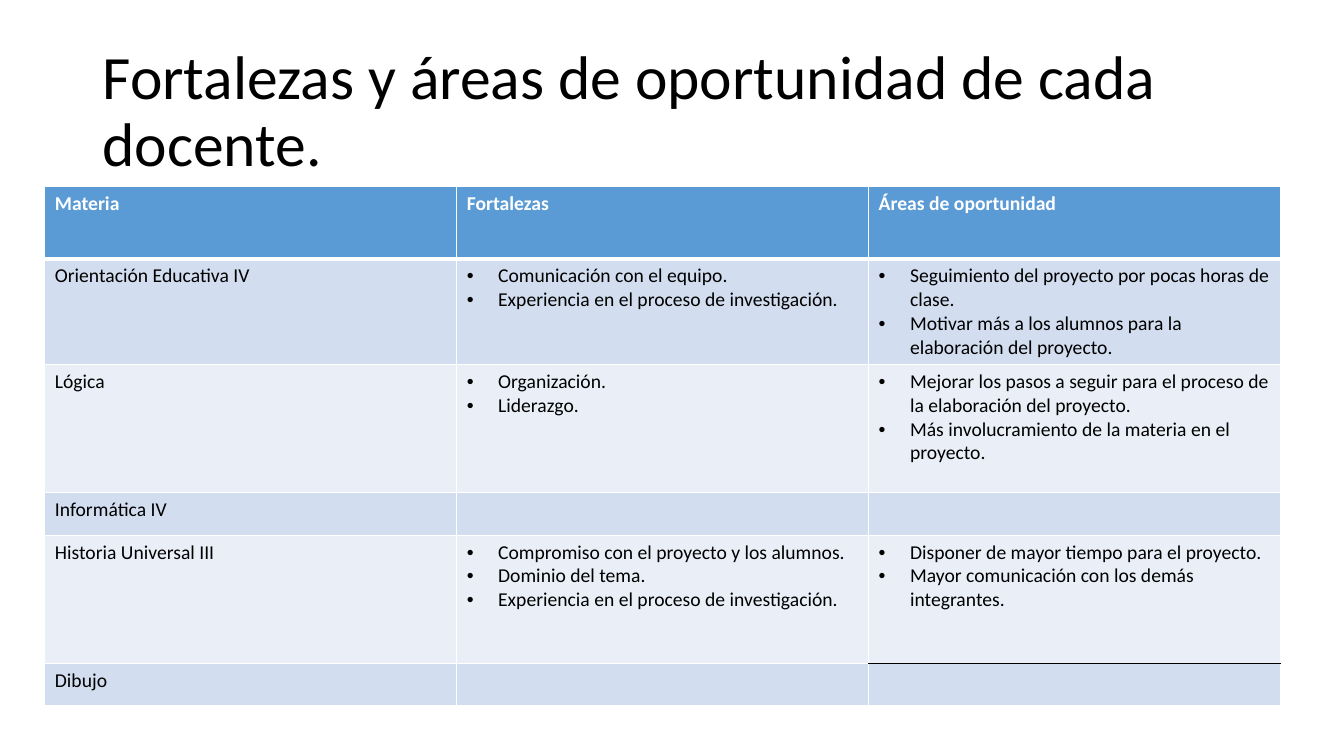
from dataclasses import dataclass

from lxml.etree import SubElement
from pptx import Presentation
from pptx.dml.color import RGBColor
from pptx.enum.text import MSO_ANCHOR as Anchor, PP_ALIGN as Align
from pptx.oxml.ns import qn
from pptx.util import Cm, Pt


@dataclass(frozen=True)
class Theme:
    """Colours, font and type sizes of the slide."""
    font: str = "Calibri"
    title_size: int = 44
    table_size: int = 14
    ink: str = "000000"
    paper: str = "FFFFFF"
    header: str = "5B9BD5"
    bands: tuple = ("D2DEEF", "EAEFF7")


THEME = Theme()
TITLE = "Fortalezas y áreas de oportunidad de cada docente."
HEADINGS = ("Materia", "Fortalezas", "Áreas de oportunidad")
COLUMN_WIDTH = 10.38
HEADER_HEIGHT = 1.83
SUBJECTS = [
    (2.62, "Orientación Educativa IV",
     ["Comunicación con el equipo.",
      "Experiencia en el proceso de investigación."],
     ["Seguimiento del proyecto por pocas horas de clase.",
      "Motivar más a los alumnos para la elaboración del proyecto."]),
    (3.23, "Lógica",
     ["Organización.", "Liderazgo."],
     ["Mejorar los pasos a seguir para el proceso de la elaboración del proyecto.",
      "Más involucramiento de la materia en el proyecto."]),
    (1.07, "Informática IV", [], []),
    (3.23, "Historia Universal III",
     ["Compromiso con el proyecto y los alumnos.",
      "Dominio del tema.",
      "Experiencia en el proceso de investigación."],
     ["Disponer de mayor tiempo para el proyecto.",
      "Mayor comunicación con los demás integrantes."]),
    (1.07, "Dibujo", [], []),
]


def style_font(font, size, color, bold=False):
    """Apply the theme font with a size, colour and weight."""
    font.name = THEME.font
    font.size = Pt(size)
    font.bold = bold
    font.color.rgb = RGBColor.from_string(color)


def add_title(page):
    """Place and format the title placeholder."""
    title = page.shapes.title
    title.left, title.top, title.width, title.height = (
        Cm(2.33), Cm(1.01), Cm(29.21), Cm(3.68))
    frame = title.text_frame
    frame.text = TITLE
    frame.word_wrap = True
    frame.vertical_anchor = Anchor.MIDDLE
    para = frame.paragraphs[0]
    para.alignment = Align.LEFT
    para.line_spacing = 0.9
    style_font(para.font, THEME.title_size, THEME.ink)


def add_bullet(para):
    """Give a paragraph a hanging round bullet."""
    props = para._p.get_or_add_pPr()
    props.set("marL", str(Cm(0.79)))
    props.set("indent", str(-Cm(0.79)))
    SubElement(props, qn("a:buFont"), typeface="Arial")
    SubElement(props, qn("a:buChar"), char="•")


def set_borders(cell, **special):
    """Draw thin white borders, except sides given as (colour, points)."""
    props = cell._tc.get_or_add_tcPr()
    for side in "LRTB":
        color, width = special.get(side, (THEME.paper, 1))
        line = SubElement(props, qn(f"a:ln{side}"), w=str(Pt(width)))
        fill = SubElement(line, qn("a:solidFill"))
        SubElement(fill, qn("a:srgbClr"), val=color)


def fill_cell(cell, lines, fill, color, bold=False, bulleted=False):
    """Write lines into a cell and colour its background."""
    cell.fill.solid()
    cell.fill.fore_color.rgb = RGBColor.from_string(fill)
    frame = cell.text_frame
    frame.text = "\n".join(lines)
    for para in frame.paragraphs:
        if bulleted and lines:
            add_bullet(para)
        style_font(para.font, THEME.table_size, color, bold)


def add_subject_table(page):
    """Add the table of strengths and areas of opportunity."""
    heights = [HEADER_HEIGHT] + [subject[0] for subject in SUBJECTS]
    table = page.shapes.add_table(
        len(heights), len(HEADINGS), Cm(1.13), Cm(4.7),
        Cm(COLUMN_WIDTH * len(HEADINGS)), Cm(sum(heights))).table
    for column in table.columns:
        column.width = Cm(COLUMN_WIDTH)
    for row, height in zip(table.rows, heights):
        row.height = Cm(height)

    header_edge = (THEME.paper, 3)
    dark_edge = (THEME.ink, 1)
    last_row, last_column = len(SUBJECTS), len(HEADINGS) - 1
    for column, heading in enumerate(HEADINGS):
        cell = table.cell(0, column)
        set_borders(cell, B=header_edge)
        fill_cell(cell, [heading], THEME.header, THEME.paper, bold=True)

    for row, (_, subject, strengths, opportunities) in enumerate(SUBJECTS, 1):
        band = THEME.bands[(row - 1) % 2]
        for column, lines in enumerate(([subject], strengths, opportunities)):
            cell = table.cell(row, column)
            edges = {"T": header_edge} if row == 1 else {}
            if column == last_column and row >= last_row - 1:
                edges["T" if row == last_row else "B"] = dark_edge
            set_borders(cell, **edges)
            fill_cell(cell, lines, band, THEME.ink, bulleted=column > 0)


def main():
    """Build the slide and save it."""
    deck = Presentation()
    deck.slide_width, deck.slide_height = Cm(33.87), Cm(19.05)
    page = deck.slides.add_slide(deck.slide_layouts[5])
    add_title(page)
    add_subject_table(page)
    deck.save("out.pptx")


if __name__ == "__main__":
    main()
